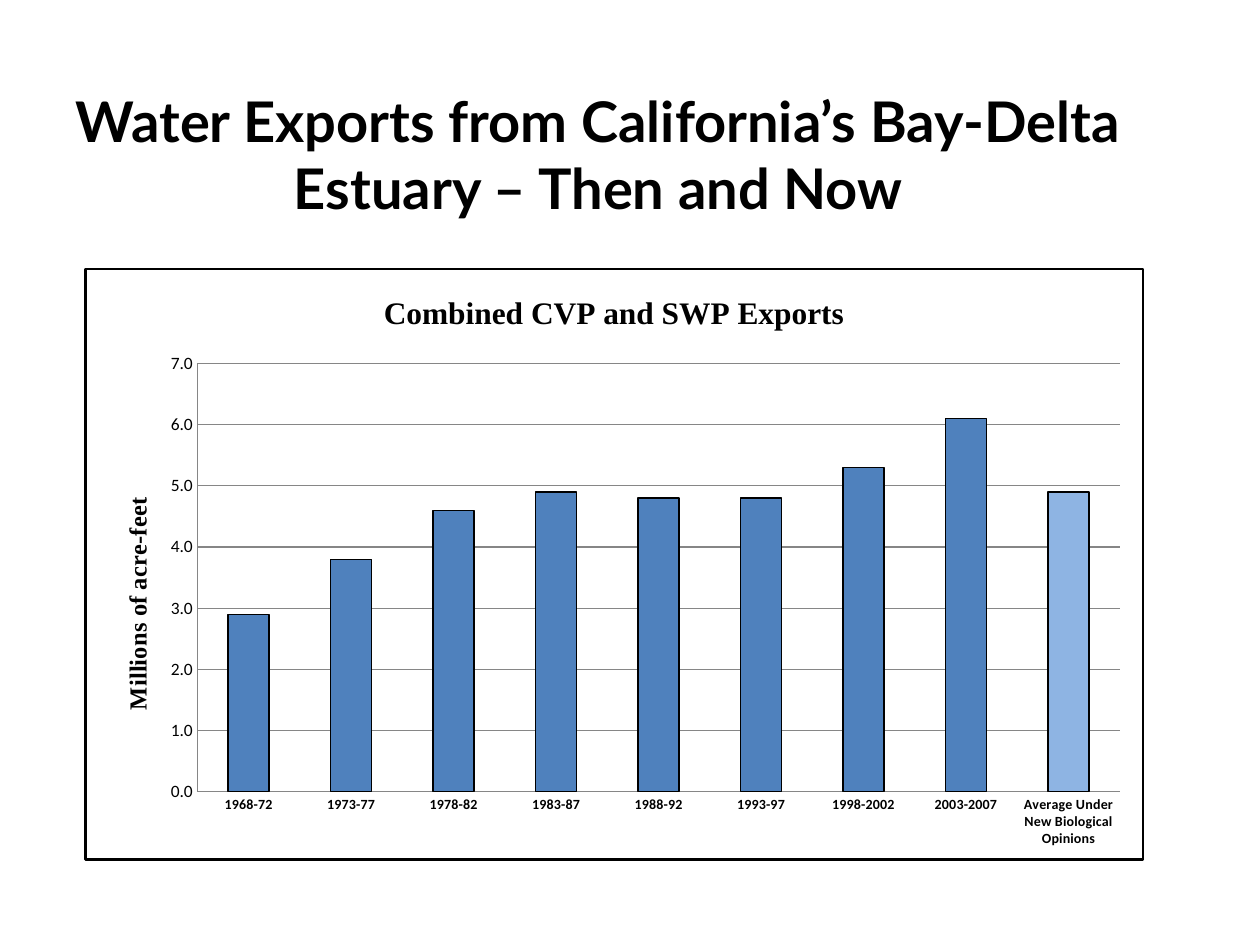
import dataclasses

import lxml.etree
import pptx
import pptx.chart.data
import pptx.dml.color
import pptx.enum.chart
import pptx.enum.text
import pptx.oxml
import pptx.oxml.ns
import pptx.util

Pt = pptx.util.Pt
qn = pptx.oxml.ns.qn


def rgb(code):
    return pptx.dml.color.RGBColor.from_string(code)


@dataclasses.dataclass(frozen=True)
class Theme:
    ink: str = "000000"
    paper: str = "FFFFFF"
    grid: str = "868686"
    past: str = "4F81BD"
    present: str = "8EB4E3"
    heading_font: str = "Lato"
    label_font: str = "Calibri"
    caption_font: str = "Times New Roman"
    heading_size: float = 32
    caption_size: float = 18
    axis_title_size: float = 14
    value_size: float = 10
    category_size: float = 8


def apply(target, values):
    for name, value in values.items():
        setattr(target, name, value)


class ExportSlide:
    def __init__(self, slide, theme):
        self.slide = slide
        self.theme = theme

    def style_font(self, font, name, size, bold):
        apply(font, {"name": name, "size": Pt(size), "bold": bold})
        font.color.rgb = rgb(self.theme.ink)

    def style_line(self, line, color, width):
        line.color.rgb = rgb(color)
        line.width = Pt(width)

    def heading(self, text, left, top, width, height):
        frame = self.slide.shapes.add_textbox(
            Pt(left), Pt(top), Pt(width), Pt(height)).text_frame
        apply(frame, {
            "word_wrap": True,
            "vertical_anchor": pptx.enum.text.MSO_ANCHOR.MIDDLE,
        })
        line = frame.paragraphs[0]
        line.alignment = pptx.enum.text.PP_ALIGN.CENTER
        run = line.add_run()
        run.text = text
        self.style_font(run.font, self.theme.heading_font, self.theme.heading_size, True)

    def caption(self, title, text, size):
        run = title.text_frame.paragraphs[0].add_run()
        run.text = text
        self.style_font(run.font, self.theme.caption_font, size, True)

    def place(self, element, **fractions):
        layout = element.find(qn("c:layout"))
        if layout is None:
            layout = lxml.etree.Element(qn("c:layout"))
            element.insert(0 if element.find(qn("c:tx")) is None else 1, layout)
        manual = lxml.etree.SubElement(layout, qn("c:manualLayout"))
        settings = {"xMode": "edge", "yMode": "edge", **fractions}
        if "w" in fractions:
            settings = {"layoutTarget": "inner", **settings}
        for name, value in settings.items():
            lxml.etree.SubElement(manual, qn(f"c:{name}")).set("val", str(value))

    def border(self, chart, width):
        frame = pptx.oxml.parse_xml(
            f'<c:spPr {pptx.oxml.ns.nsdecls("c", "a")}>'
            f'<a:solidFill><a:srgbClr val="{self.theme.paper}"/></a:solidFill>'
            f'<a:ln w="{Pt(width)}"><a:solidFill><a:srgbClr val="{self.theme.ink}"/>'
            '</a:solidFill></a:ln></c:spPr>')
        chart._chartSpace.find(qn("c:chart")).addnext(frame)

    def columns(self, title, unit, exports, left, top, width, height):
        theme = self.theme
        chart_data = pptx.chart.data.CategoryChartData(number_format="0.0")
        chart_data.categories = list(exports)
        chart_data.add_series("Series 1", list(exports.values()))
        chart = self.slide.shapes.add_chart(
            pptx.enum.chart.XL_CHART_TYPE.COLUMN_CLUSTERED,
            Pt(left), Pt(top), Pt(width), Pt(height), chart_data).chart
        self.style_font(chart.font, theme.label_font, theme.value_size, False)
        apply(chart, {"has_legend": False, "has_title": True})
        self.caption(chart.chart_title, title, theme.caption_size)
        self.border(chart, 1.5)

        periods, amounts = chart.category_axis, chart.value_axis
        for axis in (periods, amounts):
            axis.major_tick_mark = pptx.enum.chart.XL_TICK_MARK.NONE
            self.style_line(axis.format.line, theme.grid, 0.75)
        self.style_font(periods.tick_labels.font, theme.label_font, theme.category_size, True)
        apply(amounts, {
            "minimum_scale": 0, "maximum_scale": 7, "major_unit": 1,
            "has_major_gridlines": True, "has_title": True,
        })
        apply(amounts.tick_labels, {
            "number_format": "#,##0.0", "number_format_is_linked": False,
        })
        self.style_line(amounts.major_gridlines.format.line, theme.grid, 0.75)
        self.caption(amounts.axis_title, unit, theme.axis_title_size)
        self.place(amounts.axis_title._element, x=0.03, y=0.38)
        self.place(chart._chartSpace.chart.plotArea, x=0.106, y=0.16, w=0.872, h=0.725)

        plot = chart.plots[0]
        apply(plot, {"gap_width": 150, "vary_by_categories": False})
        series = plot.series[0]
        latest = series.points[len(exports) - 1]
        for part, color in ((series, theme.past), (latest, theme.present)):
            part.format.fill.solid()
            part.format.fill.fore_color.rgb = rgb(color)
            self.style_line(part.format.line, theme.ink, 0.75)


def main():
    deck = pptx.Presentation()
    apply(deck, {"slide_width": Pt(720), "slide_height": Pt(540)})
    page = ExportSlide(deck.slides.add_slide(deck.slide_layouts[6]), Theme())
    page.heading("Water Exports from California’s Bay-Delta Estuary – Then and Now",
                 36, 30, 612, 116)
    exports = {
        "1968-72": 2.9,
        "1973-77": 3.8,
        "1978-82": 4.6,
        "1983-87": 4.9,
        "1988-92": 4.8,
        "1993-97": 4.8,
        "1998-2002": 5.3,
        "2003-2007": 6.1,
        "Average Under New Biological Opinions": 4.9,
    }
    page.columns("Combined CVP and SWP Exports", "Millions of acre-feet", exports,
                 48, 153, 606, 339)
    deck.save("out.pptx")


if __name__ == "__main__":
    main()
